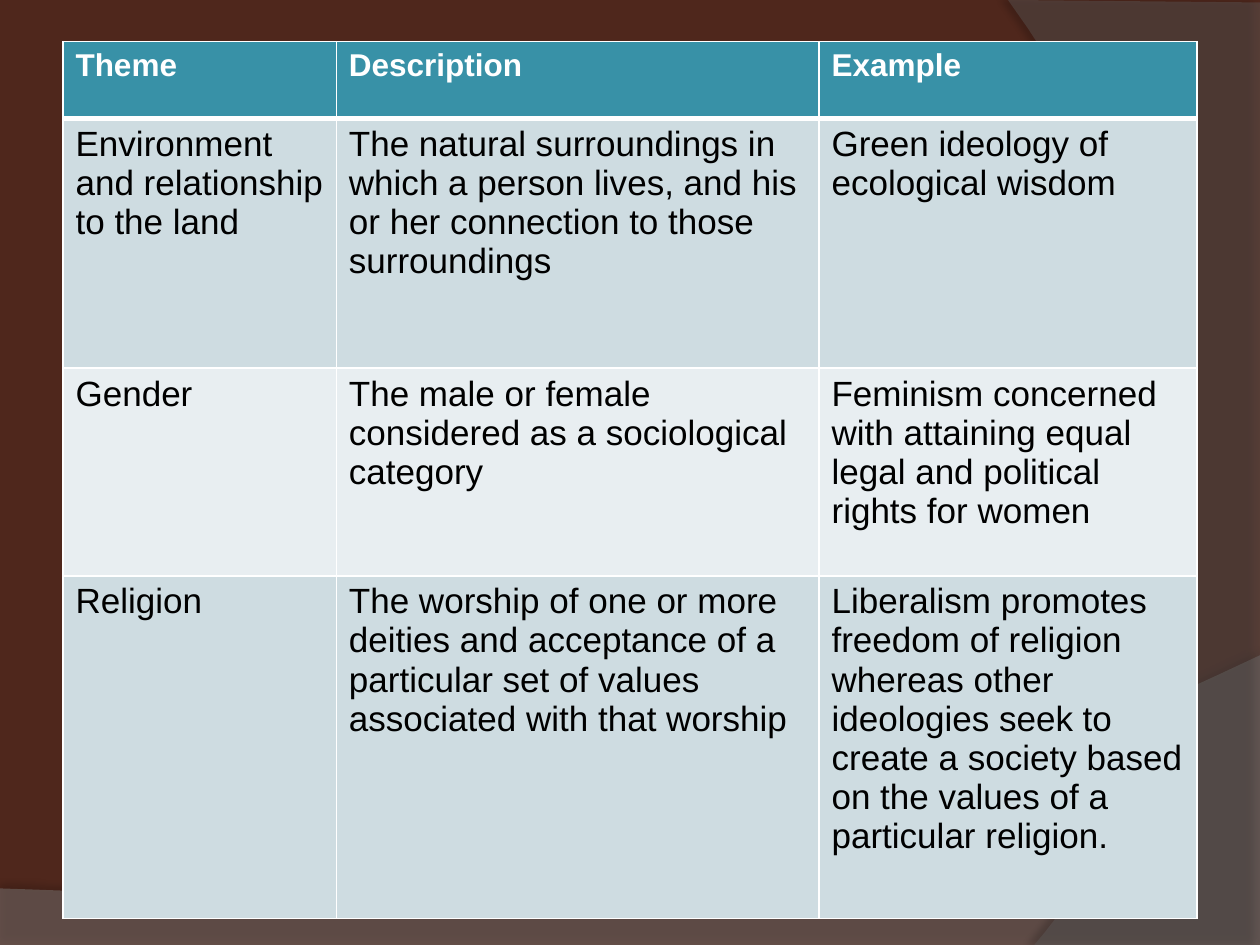
"""Build a slide with a table of ideology themes over two translucent bands."""
import pptx
import pptx.dml.color
import pptx.oxml
import pptx.oxml.ns
import pptx.util
from pptx.util import Cm

COLORS = {
    "background": "4F271C",
    "bottom": "7F7F7F",
    "right": "5E5E5E",
    "header": "3891A7",
    "odd": "CEDCE1",
    "even": "E8EEF1",
    "white": "FFFFFF",
    "black": "000000",
}
NS = pptx.oxml.ns.nsdecls("a")
RGB = pptx.dml.color.RGBColor.from_string


def write(tf, text, size=20, color="black", bold=False, font="Arial"):
    r = tf.paragraphs[0].add_run()
    r.text = text
    r.font.name = font
    r.font.size = pptx.util.Pt(size)
    r.font.bold = bold
    r.font.color.rgb = RGB(COLORS[color])


def bezier(points, steps=40):
    curve = []
    for i in range(1, steps + 1):
        t = i / steps
        weights = ((1 - t) ** 3, 3 * t * (1 - t) ** 2, 3 * t**2 * (1 - t), t**3)
        curve.append(tuple(sum(w * pt[axis] for w, pt in zip(weights, points)) for axis in (0, 1)))
    return curve


prs = pptx.Presentation()
prs.slide_width, prs.slide_height = Cm(25.4), Cm(19.05)
s = prs.slides.add_slide(prs.slide_layouts[6])
s.background.fill.solid()
s.background.fill.fore_color.rgb = RGB(COLORS["background"])

bands = [
    ("bottom", 45, [(0, 17.91), (0, 19.08), (25.4, 19.08), (25.4, 13.21)],
     [(14.2, 18.52), (9.93, 18.26), (0, 17.91)], (35, 3.5, 270)),
    ("right", 40, [(25.4, 0.05), (25.4, 19.05), (20.85, 19.05)],
     [(23.75, 15.72), (25.86, 7.62), (20.32, 0)], (45, 4, 180)),
]
for color, opacity, corners, controls, (shade, distance, angle) in bands:
    outline = corners + bezier(corners[-1:] + controls)
    points = [(Cm(x), Cm(y)) for x, y in outline]
    fb = s.shapes.build_freeform(*points[0])
    fb.add_line_segments(points[1:], close=True)
    sp = fb.convert_to_shape()
    sp.shadow.inherit = False
    sp.fill.solid()
    sp.fill.fore_color.rgb = RGB(COLORS[color])
    sp.line.fill.background()
    srgb = sp.element.spPr.find(".//" + pptx.oxml.ns.qn("a:srgbClr"))
    srgb.append(pptx.oxml.parse_xml(f'<a:alpha {NS} val="{opacity * 1000}"/>'))
    sp.element.spPr.find(pptx.oxml.ns.qn("a:effectLst")).append(pptx.oxml.parse_xml(
        f'<a:outerShdw {NS} blurRad="{pptx.util.Pt(4)}" dist="{pptx.util.Pt(distance)}" '
        f'dir="{angle * 60000}" algn="ctr" rotWithShape="0"><a:srgbClr val="{COLORS["black"]}">'
        f'<a:alpha val="{shade * 1000}"/></a:srgbClr></a:outerShdw>'))

rows = [
    ("Theme", "Description", "Example"),
    ("Environment and relationship to the land",
     "The natural surroundings in which a person lives, and his or her connection to those surroundings",
     "Green ideology of ecological wisdom"),
    ("Gender",
     "The male or female considered as a sociological category",
     "Feminism concerned with attaining equal legal and political rights for women"),
    ("Religion",
     "The worship of one or more deities and acceptance of a particular set of values "
     "associated with that worship",
     "Liberalism promotes freedom of religion whereas other ideologies seek to create a society "
     "based on the values of a particular religion."),
]
widths = [5.51, 9.73, 7.62]
heights = [1.55, 5.03, 4.19, 6.91]
table = s.shapes.add_table(len(rows), len(widths), Cm(1.27), Cm(0.84),
                           Cm(sum(widths)), Cm(sum(heights))).table
for column, width in zip(table.columns, widths):
    column.width = Cm(width)
for i, (texts, height) in enumerate(zip(rows, heights)):
    table.rows[i].height = Cm(height)
    fill = "header" if i == 0 else "odd" if i % 2 else "even"
    style = {"size": 18, "color": "white", "bold": True} if i == 0 else {}
    borders = {"L": 1, "R": 1, "T": 3 if i == 1 else 1, "B": 3 if i == 0 else 1}
    for j, text in enumerate(texts):
        cell = table.cell(i, j)
        cell.fill.solid()
        cell.fill.fore_color.rgb = RGB(COLORS[fill])
        write(cell.text_frame, text, **style)
        tcPr = cell._tc.get_or_add_tcPr()
        for k, (side, weight) in enumerate(borders.items()):
            tcPr.insert(k, pptx.oxml.parse_xml(
                f'<a:ln{side} {NS} w="{pptx.util.Pt(weight)}"><a:solidFill>'
                f'<a:srgbClr val="{COLORS["white"]}"/></a:solidFill></a:ln{side}>'))

prs.save("out.pptx")
